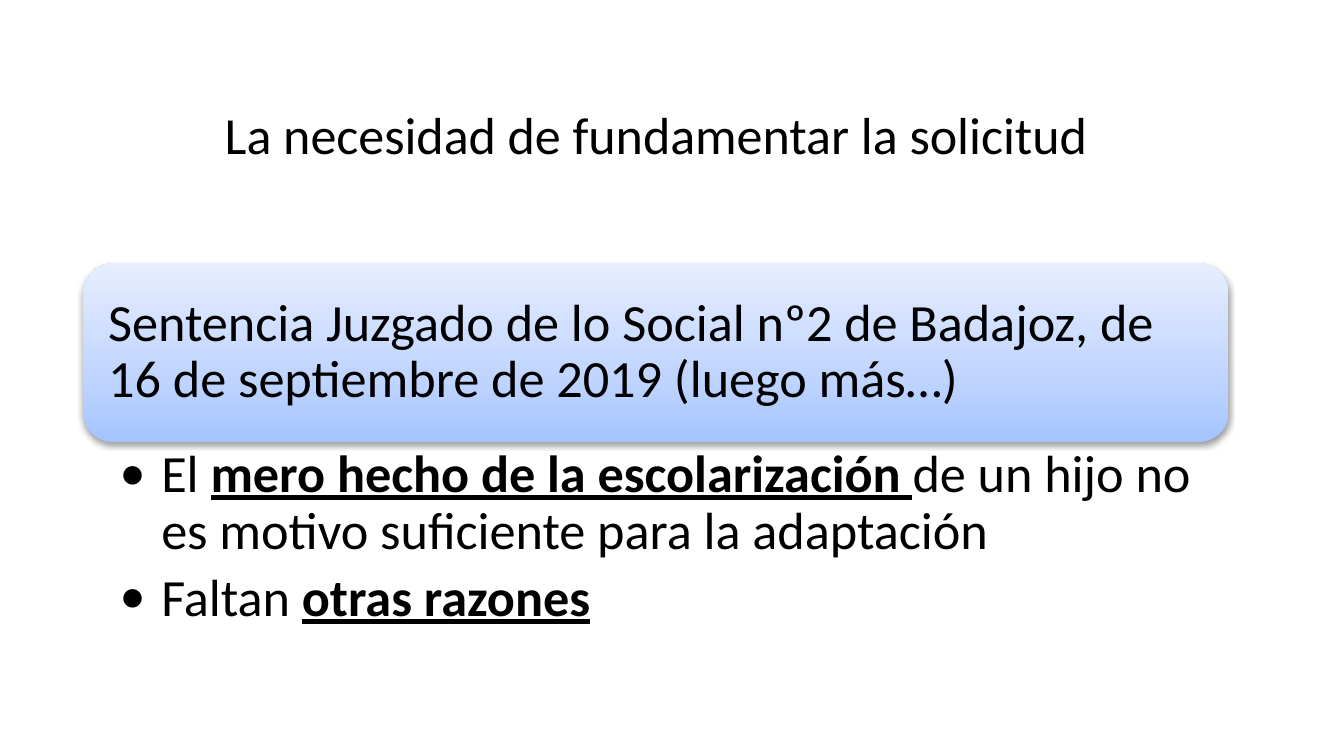
"""Build the slide on giving grounds for the request."""
from lxml import etree
from pptx import Presentation
from pptx.dml.color import RGBColor
from pptx.enum.shapes import MSO_SHAPE
from pptx.enum.text import MSO_ANCHOR, MSO_AUTO_SIZE, PP_ALIGN
from pptx.oxml import parse_xml
from pptx.oxml.ns import nsdecls, qn
from pptx.util import Emu, Pt

ROUNDED = MSO_SHAPE.ROUNDED_RECTANGLE
MIDDLE, TOP = MSO_ANCHOR.MIDDLE, MSO_ANCHOR.TOP
CENTER, LEFT = PP_ALIGN.CENTER, PP_ALIGN.LEFT
NO_AUTOFIT = MSO_AUTO_SIZE.NONE

TITLE = [[("La necesidad de fundamentar la solicitud", False)]]
RULING = [[("Sentencia Juzgado de lo Social nº2 de Badajoz, de 16 de septiembre de 2019 (luego más…)", False)]]
REASONS = [
    [("El ", False), ("mero hecho de la escolarización ", True),
     ("de un hijo no es motivo suficiente para la adaptación", False)],
    [("Faltan ", False), ("otras razones", True)],
]

THEME = {
    "font": "Calibri",
    "title_size": Pt(27.9),
    "size": Pt(28),
    "text": RGBColor(0, 0, 0),
    "banner": [(0, "A4C4FF"), (35, "BFD4FF"), (100, "E6EEFF")],
    "shadow": "000000",
}

PX_PER_INCH = 200
SLIDE_W, SLIDE_H = 2000, 1125
LEFT_X, WIDTH = 124, 1704
BANNER_Y, BANNER_H = 392, 266
BANNER_PAD = 13
REASONS_H = 294
HANG = 62


def px(length):
    return Emu(length * 914400 // PX_PER_INCH)


def box(*lengths):
    return [px(length) for length in lengths]


def write(frame, paragraphs, insets, anchor, size, align=LEFT, spacing=0.9, bullet=None):
    frame.word_wrap = True
    frame.auto_size = NO_AUTOFIT
    frame.vertical_anchor = anchor
    frame.margin_left, frame.margin_top, frame.margin_right, frame.margin_bottom = box(*insets)
    for index, parts in enumerate(paragraphs):
        paragraph = frame.add_paragraph() if index else frame.paragraphs[0]
        paragraph.alignment = align
        paragraph.line_spacing = spacing
        if bullet:
            paragraph.level = 1
            paragraph.space_after = Pt(5.6)
            properties = paragraph._p.get_or_add_pPr()
            properties.set("marL", str(px(HANG)))
            properties.set("indent", str(-px(HANG)))
            etree.SubElement(properties, qn("a:buFont"), typeface=THEME["font"])
            etree.SubElement(properties, qn("a:buChar"), char=bullet)
        for text, stressed in parts:
            run = paragraph.add_run()
            run.text = text
            run.font.name = THEME["font"]
            run.font.size = size
            run.font.color.rgb = THEME["text"]
            run.font.bold = run.font.underline = stressed


def add_banner(slide):
    banner = slide.shapes.add_shape(ROUNDED, *box(LEFT_X, BANNER_Y, WIDTH, BANNER_H))
    banner.line.fill.background()
    banner.shadow.inherit = False
    banner.fill.gradient()
    banner.fill.gradient_angle = 90
    stops = banner._element.spPr.find(".//" + qn("a:gsLst"))
    for stop in list(stops):
        stops.remove(stop)
    for position, color in THEME["banner"]:
        stop = etree.SubElement(stops, qn("a:gs"), pos=str(position * 1000))
        etree.SubElement(stop, qn("a:srgbClr"), val=color)
    banner._element.spPr.find(qn("a:effectLst")).append(parse_xml(
        f'<a:outerShdw {nsdecls("a")} blurRad="{Pt(3.1)}" dist="{Pt(1.6)}" dir="5400000" rotWithShape="0">'
        f'<a:srgbClr val="{THEME["shadow"]}"><a:alpha val="38000"/></a:srgbClr></a:outerShdw>'))


def main():
    presentation = Presentation()
    presentation.slide_width, presentation.slide_height = box(SLIDE_W, SLIDE_H)
    slide = presentation.slides.add_slide(presentation.slide_layouts[5])

    title = slide.shapes.title
    title.left, title.top, title.width, title.height = box(188, 142, 1576, 112)
    write(title.text_frame, TITLE, (20, 10, 20, 10), TOP, THEME["title_size"], CENTER, 1.0)

    add_banner(slide)
    ruling = slide.shapes.add_textbox(*box(
        LEFT_X + BANNER_PAD, BANNER_Y + BANNER_PAD, WIDTH - 2 * BANNER_PAD, BANNER_H - 2 * BANNER_PAD))
    write(ruling.text_frame, RULING, (24, 24, 24, 24), MIDDLE, THEME["size"])

    reasons = slide.shapes.add_textbox(*box(LEFT_X, BANNER_Y + BANNER_H, WIDTH, REASONS_H))
    write(reasons.text_frame, REASONS, (54, 8, 44, 8), TOP, THEME["size"], bullet="•")

    presentation.save("out.pptx")


if __name__ == "__main__":
    main()
